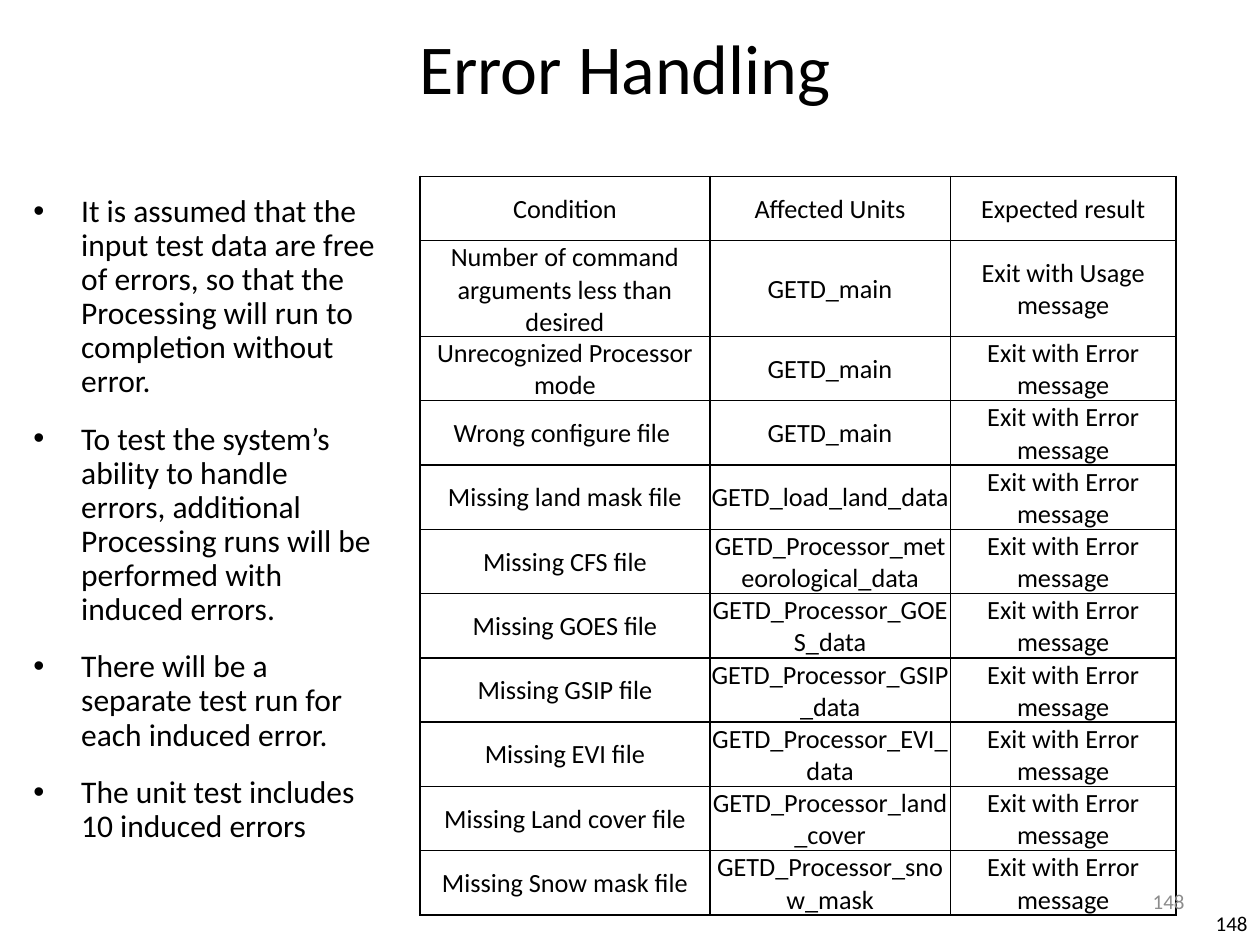
from lxml import etree
from pptx import Presentation
from pptx.dml.color import RGBColor
from pptx.enum.text import MSO_ANCHOR, PP_ALIGN
from pptx.oxml.ns import qn
from pptx.util import Inches, Pt

LEFT, CENTER, RIGHT = PP_ALIGN.LEFT, PP_ALIGN.CENTER, PP_ALIGN.RIGHT
TOP, MIDDLE, BOTTOM = MSO_ANCHOR.TOP, MSO_ANCHOR.MIDDLE, MSO_ANCHOR.BOTTOM
BLACK = RGBColor(0x00, 0x00, 0x00)
GRAY = RGBColor(0x8C, 0x8C, 0x8C)
FONT = "Calibri"

SLIDE_WIDTH, SLIDE_HEIGHT = Inches(10), Inches(7.5)
GRID_COLUMNS, GRID_ROWS = 120, 90
TABLE_COLUMNS = (2.3, 1.91, 1.79)
ROW_HEIGHT = 6.12

POINTS = [
    "It is assumed that the input test data are free of errors, so that the "
    "Processing will run to completion without error.",
    "To test the system’s ability to handle errors, additional Processing runs "
    "will be performed with induced errors.",
    "There will be a separate test run for each induced error.",
    "The unit test includes 10 induced errors",
]
HEADER = ("Condition", "Affected Units", "Expected result")
USAGE_EXIT = "Exit with Usage message"
ERROR_EXIT = "Exit with Error message"
CONDITIONS = [
    ("Number of command arguments less than desired", "main", USAGE_EXIT),
    ("Unrecognized Processor mode", "main", ERROR_EXIT),
    ("Wrong configure file ", "main", ERROR_EXIT),
    ("Missing land mask file", "load_land_data", ERROR_EXIT),
    ("Missing CFS file", "Processor_meteorological_data", ERROR_EXIT),
    ("Missing GOES file", "Processor_GOES_data", ERROR_EXIT),
    ("Missing GSIP file", "Processor_GSIP_data", ERROR_EXIT),
    ("Missing EVI file", "Processor_EVI_data", ERROR_EXIT),
    ("Missing Land cover file", "Processor_land_cover", ERROR_EXIT),
    ("Missing Snow mask file", "Processor_snow_mask", ERROR_EXIT),
]


def across(columns):
    """Return the width of a number of grid columns."""
    return int(SLIDE_WIDTH * columns / GRID_COLUMNS)


def down(rows):
    """Return the height of a number of grid rows."""
    return int(SLIDE_HEIGHT * rows / GRID_ROWS)


def place(box):
    """Turn a box in grid units into slide lengths."""
    left, top, width, height = box
    return across(left), down(top), across(width), down(height)


def add_bullet(paragraph, indent):
    """Give a paragraph a hanging bullet."""
    properties = paragraph._p.get_or_add_pPr()
    properties.set("marL", str(indent))
    properties.set("indent", str(-indent))
    etree.SubElement(properties, qn("a:buFont")).set("typeface", "Arial")
    etree.SubElement(properties, qn("a:buChar")).set("char", "•")


def write_text(frame, texts, size, color=BLACK, align=LEFT, line_spacing=1.0,
               space_before=0, bullet_indent=None):
    """Write paragraphs of one format into a text frame."""
    frame.word_wrap = True
    for index, text in enumerate(texts):
        paragraph = frame.add_paragraph() if index else frame.paragraphs[0]
        paragraph.alignment = align
        paragraph.line_spacing = line_spacing
        paragraph.space_before = Pt(space_before if index else 0)
        if bullet_indent:
            add_bullet(paragraph, bullet_indent)
        run = paragraph.add_run()
        run.text = text
        run.font.size = Pt(size)
        run.font.name = FONT
        run.font.color.rgb = color


def add_text(slide, box, texts, anchor=TOP, **text_format):
    """Add a text box with formatted paragraphs."""
    frame = slide.shapes.add_textbox(*place(box)).text_frame
    frame.vertical_anchor = anchor
    write_text(frame, texts, **text_format)


def add_title(slide, box):
    """Add the slide heading."""
    add_text(slide, box, ["Error Handling"], anchor=BOTTOM, size=40,
             align=CENTER, line_spacing=0.85)


def add_points(slide, box):
    """Add the bulleted test assumptions."""
    add_text(slide, box, POINTS, size=18, line_spacing=0.9, space_before=13.5,
             bullet_indent=Inches(0.38))


def add_page_number(slide, box, color):
    """Add a page number at the right of its box."""
    add_text(slide, box, ["148"], anchor=MIDDLE, size=12, color=color, align=RIGHT)


def add_cell_borders(cell):
    """Draw a thin black line on every side of a cell."""
    properties = cell._tc.get_or_add_tcPr()
    for index, side in enumerate(("a:lnL", "a:lnR", "a:lnT", "a:lnB")):
        line = etree.Element(qn(side), w=str(Pt(1)))
        fill = etree.SubElement(line, qn("a:solidFill"))
        etree.SubElement(fill, qn("a:srgbClr")).set("val", str(BLACK))
        properties.insert(index, line)


def fill_cell(cell, text):
    """Write and format one table cell."""
    cell.fill.background()
    cell.vertical_anchor = MIDDLE
    cell.margin_left = cell.margin_right = cell.margin_top = Inches(0.01)
    cell.margin_bottom = 0
    write_text(cell.text_frame, [text], size=15, align=CENTER)
    add_cell_borders(cell)


def add_condition_table(slide, box):
    """Add the table of induced errors."""
    rows = [HEADER] + [(condition, f"GETD_{unit}", result)
                       for condition, unit, result in CONDITIONS]
    table = slide.shapes.add_table(len(rows), len(HEADER), *place(box)).table
    table.first_row = table.horz_banding = False
    for column, share in zip(table.columns, TABLE_COLUMNS):
        column.width = across(box[2] * share / sum(TABLE_COLUMNS))
    for row, texts in zip(table.rows, rows):
        row.height = down(box[3] / len(rows))
        for cell, text in zip(row.cells, texts):
            fill_cell(cell, text)


def main():
    """Build and save the slide."""
    presentation = Presentation()
    presentation.slide_width, presentation.slide_height = SLIDE_WIDTH, SLIDE_HEIGHT
    slide = presentation.slides.add_slide(presentation.slide_layouts[6])
    add_page_number(slide, (111, 85.5, 9, 4.8), BLACK)
    add_title(slide, (13, 2, 93, 9))
    add_points(slide, (2, 18, 35, 66))
    add_condition_table(slide, (40, 16.8, 72, ROW_HEIGHT * (len(CONDITIONS) + 1)))
    add_page_number(slide, (86, 83.4, 28, 4.8), GRAY)
    presentation.save("out.pptx")


if __name__ == "__main__":
    main()
